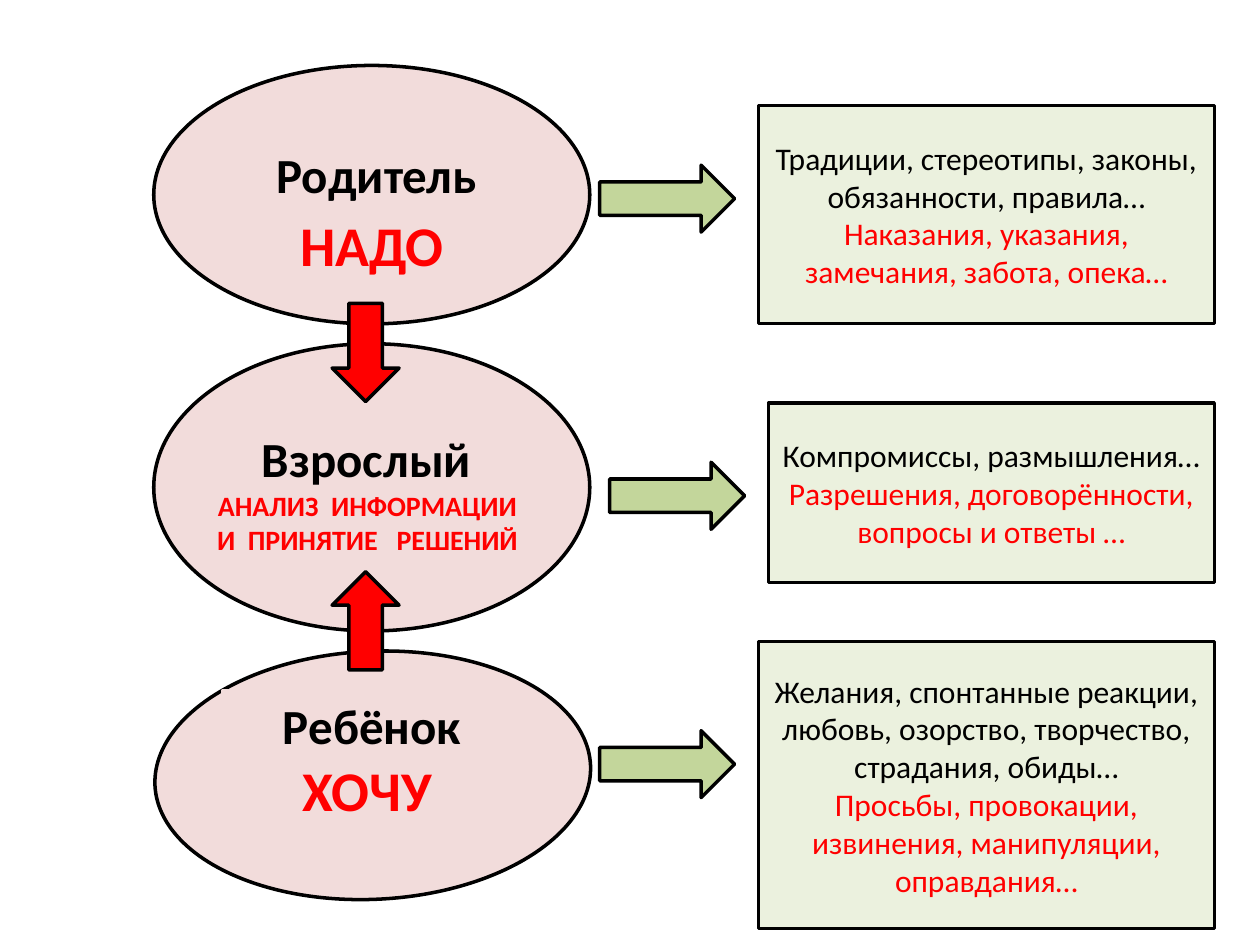
from dataclasses import dataclass

from pptx import Presentation
from pptx.dml.color import RGBColor
from pptx.enum.shapes import MSO_SHAPE
from pptx.enum.text import MSO_ANCHOR, PP_ALIGN
from pptx.util import Cm, Pt


@dataclass(frozen=True)
class Theme:
    font: str = "Calibri"
    black: str = "000000"
    red: str = "FF0000"
    pink: str = "F2DCDB"
    pale_green: str = "EBF1DE"
    green: str = "C3D69B"
    name_size: int = 28
    motto_size: int = 32
    task_size: int = 16
    box_size: int = 18
    line_width: int = 2


THEME = Theme()

# Ego states: left, top, width, height, rotation
ELLIPSES = [
    (3.1, 6.93, 8.79, 5.79, 0),
    (3.1, 1.32, 8.79, 5.21, 0),
    (3.12, 13.13, 8.79, 5, -2.7),
]

# Labels inside the ellipses: place, lines, size, colour
LABELS = [
    ((4.29, 2.92, 6.6, 1.19), ["Родитель"], THEME.name_size, THEME.black),
    ((4.09, 8.92, 6.6, 0.61), ["Взрослый"], THEME.name_size, THEME.black),
    ((4.5, 13.92, 6, 1.4), ["Ребёнок"], THEME.name_size, THEME.black),
    ((4.5, 4.32, 6, 1.19), ["НАДО"], THEME.motto_size, THEME.red),
    ((3.91, 9.93, 7, 1.19), ["АНАЛИЗ  ИНФОРМАЦИИ", "И  ПРИНЯТИЕ   РЕШЕНИЙ"],
     THEME.task_size, THEME.red),
    ((3.71, 15.32, 7.4, 1.19), ["ХОЧУ"], THEME.motto_size, THEME.red),
]

# Descriptions: place, black lines, red lines
DESCRIPTIONS = [
    ((15.29, 2.13, 9.19, 4.39),
     ["Традиции, стереотипы, законы, обязанности, правила…"],
     ["Наказания, указания, замечания, забота, опека…"]),
    ((15.49, 8.13, 8.99, 3.61),
     ["Компромиссы, размышления…"],
     ["Разрешения, договорённости,", "вопросы и ответы …"]),
    ((15.29, 12.93, 9.19, 5.79),
     ["Желания, спонтанные реакции,",
      "любовь, озорство, творчество, страдания, обиды…"],
     ["Просьбы, провокации, извинения, манипуляции, оправдания…"]),
]

# Arrows: left, top, width, rotation, fill
ARROW_HEIGHT = 1.35
ARROWS = [
    (12.09, 3.33, 2.72, 0, THEME.green),
    (12.29, 9.32, 2.72, 0, THEME.green),
    (12.09, 14.73, 2.72, 0, THEME.green),
    (6.38, 6.43, 1.98, 90, THEME.red),
    (6.38, 11.84, 1.98, 270, THEME.red),
]


def add_figure(slide, kind, place, fill, line=THEME.black, rotation=0):
    shape = slide.shapes.add_shape(kind, *map(Cm, place))
    shape.shadow.inherit = False
    shape.rotation = rotation
    shape.fill.solid()
    shape.fill.fore_color.rgb = RGBColor.from_string(fill)
    shape.line.color.rgb = RGBColor.from_string(line)
    shape.line.width = Pt(THEME.line_width)
    return shape


def write_lines(shape, lines, size, bold=False):
    """Fill the shape with centred paragraphs given as (text, colour)."""
    frame = shape.text_frame
    frame.word_wrap = True
    frame.vertical_anchor = MSO_ANCHOR.MIDDLE
    for index, (text, color) in enumerate(lines):
        paragraph = frame.add_paragraph() if index else frame.paragraphs[0]
        paragraph.text = text
        paragraph.alignment = PP_ALIGN.CENTER
        paragraph.font.name = THEME.font
        paragraph.font.size = Pt(size)
        paragraph.font.bold = bold
        paragraph.font.color.rgb = RGBColor.from_string(color)


def add_label(slide, place, lines, size, color):
    shape = add_figure(slide, MSO_SHAPE.RECTANGLE, place, THEME.pink, THEME.pink)
    write_lines(shape, [(line, color) for line in lines], size, bold=True)


def add_description(slide, place, black_lines, red_lines):
    shape = add_figure(slide, MSO_SHAPE.RECTANGLE, place, THEME.pale_green)
    lines = [(line, THEME.black) for line in black_lines]
    lines += [(line, THEME.red) for line in red_lines]
    write_lines(shape, lines, THEME.box_size)


def main():
    presentation = Presentation()
    presentation.slide_width, presentation.slide_height = Cm(25.4), Cm(19.05)
    slide = presentation.slides.add_slide(presentation.slide_layouts[6])

    # Ego states
    for *place, rotation in ELLIPSES:
        add_figure(slide, MSO_SHAPE.OVAL, place, THEME.pink, rotation=rotation)
    for label in LABELS:
        add_label(slide, *label)

    # What each state brings
    for description in DESCRIPTIONS:
        add_description(slide, *description)

    # Links between the parts
    for left, top, width, rotation, fill in ARROWS:
        add_figure(slide, MSO_SHAPE.RIGHT_ARROW, (left, top, width, ARROW_HEIGHT),
                   fill, rotation=rotation)

    presentation.save("out.pptx")


if __name__ == "__main__":
    main()
